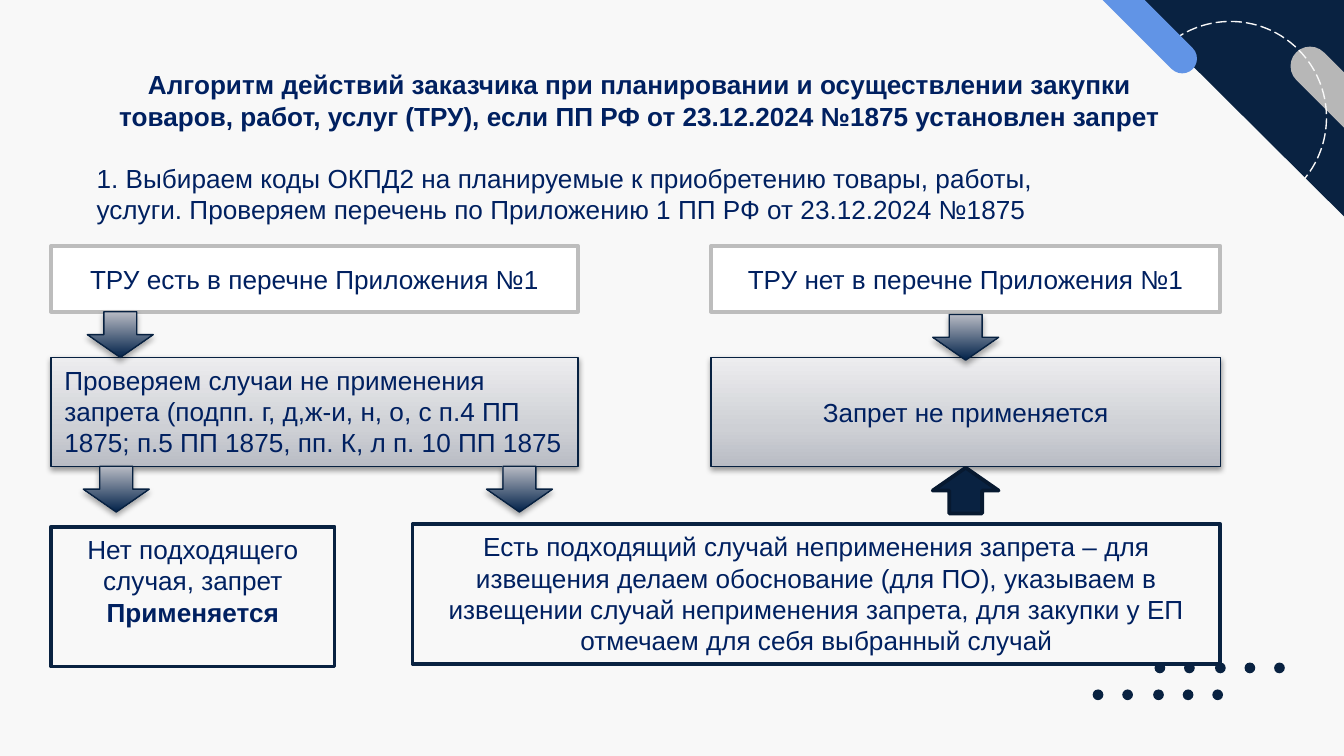
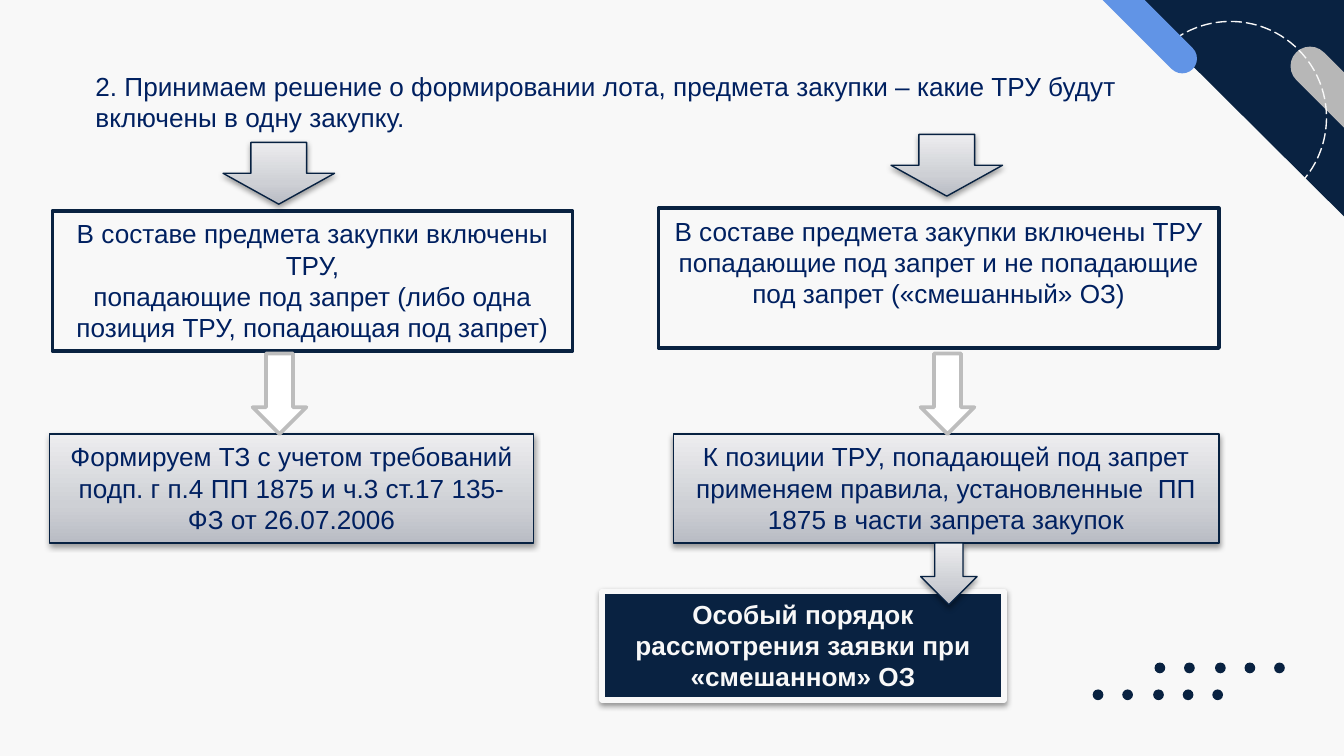
from lxml import etree
from pptx import Presentation
from pptx.dml.color import RGBColor
from pptx.enum.dml import MSO_LINE
from pptx.enum.shapes import MSO_SHAPE
from pptx.enum.text import MSO_ANCHOR, MSO_AUTO_SIZE, PP_ALIGN
from pptx.oxml import parse_xml
from pptx.oxml.ns import nsdecls, qn
from pptx.util import Pt

PX = 9144
COLORS = {
    "paper": "F8F8F8", "navy": "092241", "ink": "002060", "edge": "072141",
    "deep": "071930", "white": "FFFFFF", "silver": "BDBDBD", "grey": "B7B7B7",
    "blue": "6194E6", "black": "000000",
}
SILVER_FADE = [(0, "B9BCC4"), (35, "CED0D5"), (100, "EDEDEF")]
NAVY_FADE = [(0, "012149"), (100, "B8BBC4")]
SOFT_SHADOW = (38, 20000)
ARROW_SHADOW = (35, 23000)
STYLES = {
    "dot": ("navy", None, 0, None),
    "grey bar": ("grey", None, 0, None),
    "blue bar": ("blue", None, 0, None),
    "ring": (None, "paper", 0.75, None),
    "plain": ("white", "silver", 2, None),
    "framed": ("paper", "navy", 2, None),
    "faded": (SILVER_FADE, "edge", 0.75, SOFT_SHADOW),
    "dark fade": (NAVY_FADE, "edge", 0.75, ARROW_SHADOW),
    "solid": ("navy", "deep", 2, None),
    "final": ("navy", "paper", 3, SOFT_SHADOW),
}
LEFT, CENTER = PP_ALIGN.LEFT, PP_ALIGN.CENTER
TOP, MIDDLE = MSO_ANCHOR.TOP, MSO_ANCHOR.MIDDLE


def add_block(page, kind, place, style, turn=0):
    box = page.shapes.add_shape(kind, *[n * PX for n in place])
    box.rotation = turn
    box.shadow.inherit = False
    fill, line, width, shadow = STYLES[style]
    if fill is None:
        box.fill.background()
    elif isinstance(fill, str):
        box.fill.solid()
        box.fill.fore_color.rgb = RGBColor.from_string(COLORS[fill])
    else:
        stops = "".join(
            f'<a:gs pos="{pos * 1000}"><a:srgbClr val="{color}"/></a:gs>' for pos, color in fill)
        box.element.spPr.find(qn("a:prstGeom")).addnext(parse_xml(
            f'<a:gradFill {nsdecls("a")} rotWithShape="1"><a:gsLst>{stops}</a:gsLst>'
            '<a:lin ang="16200000" scaled="0"/></a:gradFill>'))
    if line:
        box.line.color.rgb = RGBColor.from_string(COLORS[line])
        box.line.width = Pt(width)
    else:
        box.line.fill.background()
    if shadow:
        alpha, distance = shadow
        effects = box.element.spPr.find(qn("a:effectLst"))
        outer = etree.SubElement(effects, qn("a:outerShdw"), blurRad="40000",
                                 dist=str(distance), dir="5400000", rotWithShape="0")
        tint = etree.SubElement(outer, qn("a:srgbClr"), val=COLORS["black"])
        etree.SubElement(tint, qn("a:alpha"), val=str(alpha * 1000))
    return box


def write(box, lines, align=CENTER, anchor=TOP, color="ink", bold=()):
    frame = box.text_frame
    frame.word_wrap = True
    frame.auto_size = MSO_AUTO_SIZE.NONE
    frame.vertical_anchor = anchor
    for index, line in enumerate(lines):
        para = frame.paragraphs[0] if index == 0 else frame.add_paragraph()
        para.alignment = align
        span = para.add_run()
        span.text = line
        span.font.name = "Arial"
        span.font.size = Pt(14)
        span.font.bold = index in bold
        span.font.color.rgb = RGBColor.from_string(COLORS[color])


deck = Presentation()
deck.slide_width = 1000 * PX
deck.slide_height = deck.slide_width * 9 // 16
layout = deck.slide_layouts[5]
layout.background.fill.solid()
layout.background.fill.fore_color.rgb = RGBColor.from_string(COLORS["paper"])
ban_page = deck.slides.add_slide(layout)
lot_page = deck.slides.add_slide(layout)

decor = []
for row_left, row_top in [(859, 493), (813, 513)]:
    for column in range(5):
        place = (row_left + round(column * 22.3), row_top, 8, 8)
        decor.append(add_block(ban_page, MSO_SHAPE.OVAL, place, "dot"))
decor.append(add_block(ban_page, MSO_SHAPE.RIGHT_TRIANGLE, (837, -1, 170, 169), "dot", 180))
grey_bar = add_block(ban_page, MSO_SHAPE.ROUNDED_RECTANGLE, (946, 69, 126, 29), "grey bar", 45)
ring = add_block(ban_page, MSO_SHAPE.OVAL, (844, 16, 143, 143), "ring")
ring.line.dash_style = MSO_LINE.LONG_DASH
blue_bar = add_block(ban_page, MSO_SHAPE.ROUNDED_RECTANGLE, (785, -2, 120, 22), "blue bar", 45)
for bar in (grey_bar, blue_bar):
    bar.adjustments[0] = 0.5
for box in decor + [grey_bar, ring, blue_bar]:
    layout.shapes.element.append(box.element)

titles = [
    (ban_page, (62, 46, 828, 57), CENTER, (0, 1), [
        "Алгоритм действий заказчика при планировании и осуществлении закупки",
        "товаров, работ, услуг (ТРУ), если ПП РФ от 23.12.2024 №1875 установлен запрет"]),
    (lot_page, (61, 47, 818, 57), LEFT, (), [
        "2. Принимаем решение о формировании лота, предмета закупки – какие ТРУ будут "
        "включены в одну закупку."]),
]
for page, place, align, bold, lines in titles:
    title = page.shapes.title
    title.left, title.top, title.width, title.height = [n * PX for n in place]
    write(title, lines, align, bold=bold)

step = ban_page.shapes.add_textbox(*[n * PX for n in (62, 116, 828, 57)])
write(step, ["1. Выбираем коды ОКПД2 на планируемые к приобретению товары, работы,",
             "услуги. Проверяем перечень по Приложению 1 ПП РФ от 23.12.2024 №1875"], LEFT)

boxes = [
    (ban_page, (38, 183, 392, 49), "plain", CENTER, MIDDLE, "ink", (),
     ["ТРУ есть в перечне Приложения №1"]),
    (ban_page, (529, 183, 379, 49), "plain", CENTER, MIDDLE, "ink", (),
     ["ТРУ нет в перечне Приложения №1"]),
    (ban_page, (38, 266, 392, 81), "faded", LEFT, TOP, "ink", (),
     ["Проверяем случаи не применения запрета (подпп. г, д,ж-и, н, о, с п.4 ПП 1875; "
      "п.5 ПП 1875, пп. К, л п. 10 ПП 1875"]),
    (ban_page, (529, 266, 379, 81), "faded", CENTER, MIDDLE, "ink", (),
     ["Запрет не применяется"]),
    (ban_page, (38, 392, 211, 104), "framed", CENTER, TOP, "ink", (2,),
     ["Нет подходящего", "случая, запрет", "Применяется"]),
    (ban_page, (307, 390, 601, 104), "framed", CENTER, TOP, "ink", (),
     ["Есть подходящий случай неприменения запрета – для извещения делаем обоснование "
      "(для ПО), указываем в извещении случай неприменения запрета, для закупки у ЕП "
      "отмечаем для себя выбранный случай"]),
    (lot_page, (39, 157, 387, 104), "framed", CENTER, TOP, "ink", (),
     ["В составе предмета закупки включены ТРУ,",
      "попадающие под запрет (либо одна позиция ТРУ, попадающая под запрет)"]),
    (lot_page, (490, 155, 417, 104), "framed", CENTER, TOP, "ink", (),
     ["В составе предмета закупки включены ТРУ попадающие под запрет и не попадающие "
      "под запрет («смешанный» ОЗ)"]),
    (lot_page, (37, 323, 360, 81), "faded", CENTER, TOP, "ink", (),
     ["Формируем ТЗ с учетом требований",
      "подп. г п.4 ПП 1875 и ч.3 ст.17 135-ФЗ от 26.07.2006"]),
    (lot_page, (501, 323, 406, 81), "faded", CENTER, TOP, "ink", (),
     ["К позиции ТРУ, попадающей под запрет",
      "применяем правила, установленные  ПП 1875 в части запрета закупок"]),
    (lot_page, (448, 440, 299, 81), "final", CENTER, TOP, "paper", (0,),
     ["Особый порядок рассмотрения заявки при «смешанном» ОЗ"]),
]
for page, place, style, align, anchor, color, bold, lines in boxes:
    box = add_block(page, MSO_SHAPE.RECTANGLE, place, style)
    write(box, lines, align, anchor, color, bold)

arrows = [
    (ban_page, (65, 232, 49, 34), "dark fade", 0),
    (ban_page, (62, 347, 49, 34), "dark fade", 0),
    (ban_page, (362, 347, 49, 34), "dark fade", 0),
    (ban_page, (694, 234, 49, 34), "dark fade", 0),
    (ban_page, (694, 348, 49, 34), "solid", 180),
    (lot_page, (166, 106, 83, 46), "faded", 0),
    (lot_page, (663, 100, 83, 46), "faded", 0),
    (lot_page, (188, 263, 40, 60), "plain", 0),
    (lot_page, (685, 263, 40, 60), "plain", 0),
    (lot_page, (685, 404, 42, 46), "faded", 0),
]
for page, place, style, turn in arrows:
    add_block(page, MSO_SHAPE.DOWN_ARROW, place, style, turn)

deck.save("out.pptx")
